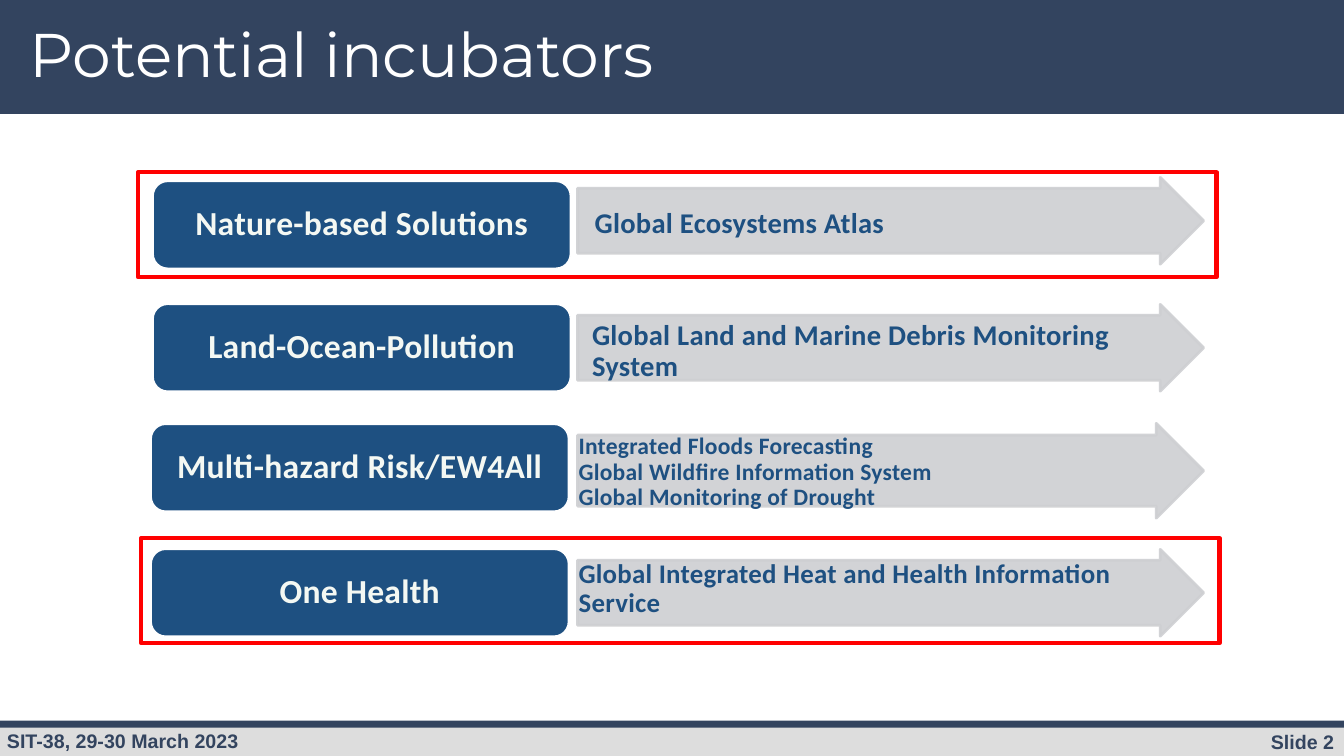
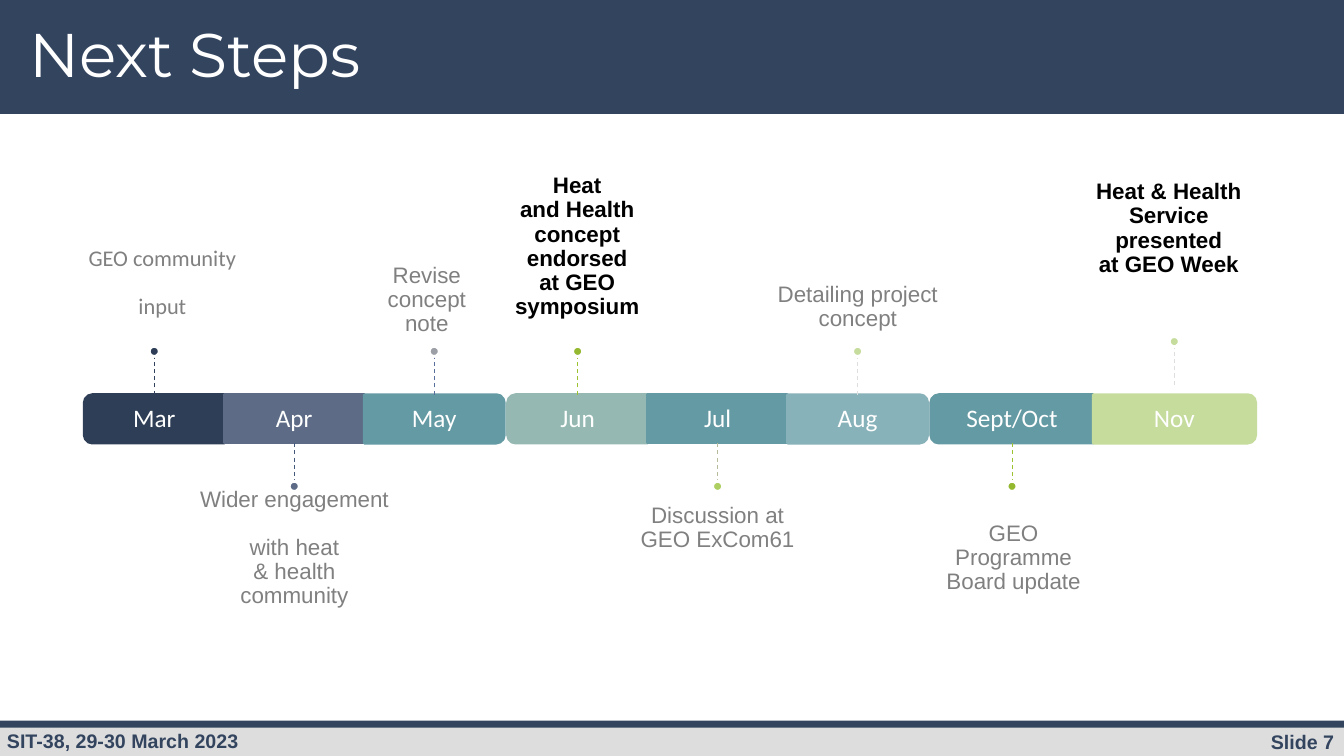
from lxml import etree
from pptx import Presentation
from pptx.dml.color import RGBColor
from pptx.enum.dml import MSO_LINE
from pptx.enum.shapes import MSO_CONNECTOR, MSO_SHAPE
from pptx.enum.text import MSO_ANCHOR, PP_ALIGN
from pptx.oxml.ns import qn
from pptx.util import Pt

RECT, OVAL = MSO_SHAPE.RECTANGLE, MSO_SHAPE.OVAL
ROUNDED, ARROW = MSO_SHAPE.ROUNDED_RECTANGLE, MSO_SHAPE.RIGHT_ARROW
ROUND_TOP = MSO_SHAPE.ROUND_2_SAME_RECTANGLE
STRAIGHT, DASH = MSO_CONNECTOR.STRAIGHT, MSO_LINE.DASH
TOP, MIDDLE, BOTTOM = MSO_ANCHOR.TOP, MSO_ANCHOR.MIDDLE, MSO_ANCHOR.BOTTOM
LEFT, CENTER, RIGHT = PP_ALIGN.LEFT, PP_ALIGN.CENTER, PP_ALIGN.RIGHT

THEME = {
    "colors": {
        "navy": "33445F", "footer": "DDDDDD", "white": "FFFFFF",
        "topic": "1E5081", "topic text": "F4F8F3", "arrow": "CECFD2",
        "frame": "FF0000", "gray": "808080", "black": "000000",
    },
    "text": {
        "title": ("white", {"name": "Montserrat", "size": Pt(44)}),
        "footer": ("navy", {"name": "Arial", "size": Pt(14), "bold": True}),
        "topic": ("topic text", {"name": "Calibri", "size": Pt(24), "bold": True}),
        "large": ("topic", {"name": "Calibri", "size": Pt(20.4), "bold": True}),
        "medium": ("topic", {"name": "Calibri", "size": Pt(19.2), "bold": True}),
        "small": ("topic", {"name": "Calibri", "size": Pt(16.8), "bold": True}),
        "month": ("white", {"name": "Calibri", "size": Pt(18)}),
        "first step": ("gray", {"name": "Calibri", "size": Pt(16)}),
        "step": ("gray", {"name": "Arial", "size": Pt(16)}),
        "milestone": ("black", {"name": "Arial", "size": Pt(16), "bold": True}),
    },
    "spaced": ("topic", "large", "medium", "small"),
}
COLORS = THEME["colors"]


def add_shape(slide, kind, box, fill=None, line=None, width=1):
    shape = slide.shapes.add_shape(kind, *map(Pt, box))
    shape.shadow.inherit = False
    for part, color in ((shape.fill, fill), (shape.line.fill, line)):
        if color:
            part.solid()
            part.fore_color.rgb = RGBColor.from_string(color)
        else:
            part.background()
    if line:
        shape.line.width = Pt(width)
    return shape


def add_text(slide, text, box, style, align=LEFT, anchor=TOP, gap=0):
    """Add a text box without insets; gap is the space between paragraphs."""
    frame = slide.shapes.add_textbox(*map(Pt, box)).text_frame
    layout = {"word_wrap": True, "vertical_anchor": anchor, "margin_left": 0,
              "margin_top": 0, "margin_right": 0, "margin_bottom": 0}
    for name, value in layout.items():
        setattr(frame, name, value)
    frame.text = text
    color, font_format = THEME["text"][style]
    for number, paragraph in enumerate(frame.paragraphs):
        paragraph.alignment = align
        paragraph.line_spacing = 1.0 if style == "footer" else 0.9
        if number:
            paragraph.space_before = Pt(gap)
        for run in paragraph.runs:
            for name, value in font_format.items():
                setattr(run.font, name, value)
            run.font.color.rgb = RGBColor.from_string(COLORS[color])
            if style in THEME["spaced"]:
                run.font._element.set("spc", "20")


prs = Presentation()
prs.slide_width, prs.slide_height = Pt(960), Pt(540)

# Shared bands, titles and footers
slides = []
for title, number in (("Potential incubators", 2), ("Next Steps", 7)):
    slide = prs.slides.add_slide(prs.slide_layouts[6])
    slides.append(slide)
    for top, height, color in ((0, 81.4, "navy"), (517.7, 22.3, "footer"), (514.8, 5, "navy")):
        add_shape(slide, RECT, (0, top, 960, height), COLORS[color])
    add_text(slide, f"Slide {number}", (808, 521.3, 145, 17), "footer", RIGHT)
    add_text(slide, "SIT-38, 29-30 March 2023", (5, 520.6, 380, 17), "footer")
    add_text(slide, title, (20.9, 17.3, 725, 54), "title")
incubators, next_steps = slides

# Topics and the initiatives they lead to
# topic, left, top, arrow top, arrow height, initiative, its left, its top, its style
topics = [
    ("Nature-based Solutions", 109.4, 129.6, 126.7, 62,
     "Global Ecosystems Atlas", 424.8, 149, "large"),
    ("Land-Ocean-Pollution", 109.4, 217.4, 217.4, 62,
     "Global Land and Marine Debris Monitoring System", 422.9, 229.2, "large"),
    ("Multi-hazard Risk/EW4All", 108, 303.1, 302.4, 67.7,
     "Integrated Floods Forecasting\nGlobal Wildfire Information System\n"
     "Global Monitoring of Drought", 413.3, 310.3, "small"),
    ("One Health", 108, 392.4, 392.4, 62,
     "Global Integrated Heat and Health Information Service", 413.3, 400.3, "medium"),
]
for topic, left, top, arrow_top, arrow_height, initiative, text_left, text_top, style in topics:
    arrow = add_shape(incubators, ARROW, (412.6, arrow_top, 447.1, arrow_height),
                      COLORS["arrow"], COLORS["arrow"], 2)
    arrow.adjustments[0] = 0.75
    for color in list(arrow._element.spPr.iter(qn("a:srgbClr"))):
        etree.SubElement(color, qn("a:alpha"), val="90000")
    add_text(incubators, initiative, (text_left, text_top, 405, 46), style)
    topic_box = (left, top, 298, 62)
    add_shape(incubators, ROUNDED, topic_box, COLORS["topic"], COLORS["white"])
    add_text(incubators, topic, topic_box, "topic", CENTER, MIDDLE)
for left, top in ((98.6, 123.1), (100.8, 384.5)):
    add_shape(incubators, RECT, (left, top, 770.4, 74.9), line=COLORS["frame"], width=3)

# Timeline: month, centre, width, rounded-side rotation, bar, stem and dot colours,
# then the step with its left, top, width, anchor and style
BAR_MIDDLE, BAR_HEIGHT, DOT = 299.2, 34.6, 7.2
months = [
    ("Mar", 110.2, 100, 270, "2E3E56", "31415B", "2E3E56",
     "GEO community\ninput", 62, 116.6, 108, BOTTOM, "first step"),
    ("Apr", 210.2, 100, 0, "5D6B86", "43587B", "5D6B86",
     "Wider engagement\nwith heat\v& health\vcommunity", 141.8, 348.5, 137, TOP, "step"),
    ("May", 310.2, 100, 90, "649AA3", "576F9A", "9C9FA6",
     "Revise concept note", 266.4, 128.9, 77, BOTTOM, "step"),
    ("Jun", 412.6, 100, 270, "95B9B2", "9CC232", "94B82F",
     "Heat\vand Health concept endorsed\vat GEO symposium",
     358.6, 116.6, 107.3, BOTTOM, "milestone"),
    ("Jul", 512.6, 100, 0, "649AA3", "B5BC9C", "ADCF61",
     "Discussion at GEO ExCom61", 451.4, 360, 122.4, TOP, "step"),
    ("Aug", 612.6, 100, 90, "88B2B9", "DEDEDE", "C5DC9C",
     "Detailing project concept", 529.2, 125.3, 167, BOTTOM, "step"),
    ("Sept/Oct", 722.9, 116, 270, "649AA3", "9CC232", "94B82F",
     "GEO Programme\vBoard update", 666, 313, 116, BOTTOM, "step"),
    ("Nov", 838.9, 116, 90, "C5DC9C", "DEDEDE", "C5DC9C",
     "Heat & Health\vService presented\vat GEO Week", 769.7, 128.9, 130.3, TOP, "milestone"),
]
for index, (month, center, width, rotation, bar_color, stem_color, dot_color,
            step, left, top, step_width, anchor, style) in enumerate(months):
    bar_top = BAR_MIDDLE - BAR_HEIGHT / 2
    bar_box = (center - width / 2, bar_top, width, BAR_HEIGHT)
    if rotation:
        upright_box = (center - BAR_HEIGHT / 2, BAR_MIDDLE - width / 2, BAR_HEIGHT, width)
        bar = add_shape(next_steps, ROUND_TOP, upright_box, bar_color, bar_color, 2)
        bar.rotation = rotation
    else:
        bar = add_shape(next_steps, RECT, bar_box, bar_color, bar_color, 2)
    add_text(next_steps, month, bar_box, "month", CENTER, MIDDLE)
    height = 111.6 if anchor == BOTTOM else 121
    add_text(next_steps, step, (left, top, step_width, height), style, CENTER, anchor, gap=17)

    below = month in ("Apr", "Jul", "Sept/Oct")
    shift = -7 if month == "Nov" else 0
    stem_start = (bar_top + BAR_HEIGHT if below else bar_top) + shift
    stem_end = stem_start + (27.3 if below else -27.3)
    stem_x = center if month != "Nov" else center - 0.1
    stem = next_steps.shapes.add_connector(
        STRAIGHT, Pt(stem_x), Pt(stem_start), Pt(stem_x), Pt(stem_end))
    if not rotation:
        stem.begin_connect(bar, 2)
    stem.line.color.rgb = RGBColor.from_string(stem_color)
    stem.line.width, stem.line.dash_style = Pt(0.75), DASH
    etree.SubElement(stem._element.spPr, qn("a:effectLst"))
    dot_middle = stem_end + (3.6 if below else -3.6)
    add_shape(next_steps, OVAL, (stem_x - DOT / 2, dot_middle - DOT / 2, DOT, DOT),
              dot_color, COLORS["white"], 2)

prs.save("out.pptx")
